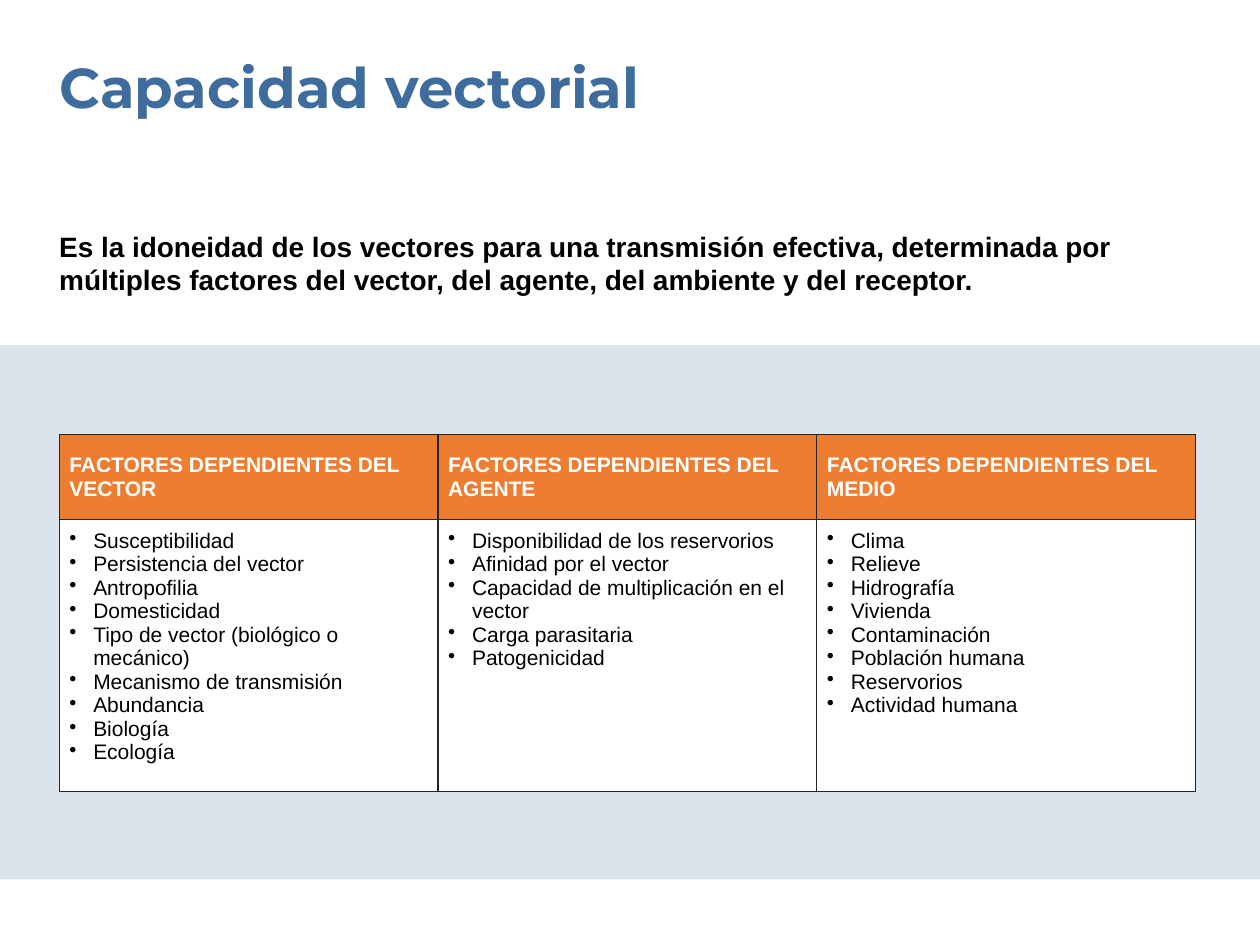
from lxml import etree
from pptx import Presentation
from pptx.dml.color import RGBColor
from pptx.enum.shapes import MSO_SHAPE
from pptx.enum.text import MSO_ANCHOR
from pptx.oxml.ns import qn
from pptx.util import Inches, Pt

RECTANGLE = MSO_SHAPE.RECTANGLE
TOP, MIDDLE = MSO_ANCHOR.TOP, MSO_ANCHOR.MIDDLE

BLACK, WHITE, BLUE = "000000", "FFFFFF", "3D6C9D"
BAND_COLOR, HEADER_COLOR, BORDER_COLOR = "DBE4EA", "ED7D31", "262626"
LEFT_MARGIN = Inches(0.47)

FACTORS = {
    "FACTORES DEPENDIENTES DEL VECTOR": [
        "Susceptibilidad",
        "Persistencia del vector",
        "Antropofilia",
        "Domesticidad",
        "Tipo de vector (biológico o mecánico)",
        "Mecanismo de transmisión",
        "Abundancia",
        "Biología",
        "Ecología",
    ],
    "FACTORES DEPENDIENTES DEL AGENTE": [
        "Disponibilidad de los reservorios",
        "Afinidad por el vector",
        "Capacidad de multiplicación en el vector",
        "Carga parasitaria",
        "Patogenicidad",
    ],
    "FACTORES DEPENDIENTES DEL MEDIO": [
        "Clima",
        "Relieve",
        "Hidrografía",
        "Vivienda",
        "Contaminación",
        "Población humana",
        "Reservorios",
        "Actividad humana",
    ],
}


def paint(fill, color):
    """Give a fill one solid colour."""
    fill.solid()
    fill.fore_color.rgb = RGBColor.from_string(color)


def write(paragraph, text, size=12, font="Arial", color=BLACK, bold=False):
    """Add one formatted run to a paragraph."""
    run = paragraph.add_run()
    run.text = text
    run.font.size = Pt(size)
    run.font.name = font
    run.font.bold = bold
    run.font.color.rgb = RGBColor.from_string(color)


def add_bullet(paragraph, indent=Inches(0.19)):
    """Give a paragraph a black hanging bullet."""
    properties = paragraph._p.get_or_add_pPr()
    properties.set("marL", str(indent))
    properties.set("indent", str(-indent))
    bullet_color = etree.SubElement(properties, qn("a:buClr"))
    etree.SubElement(bullet_color, qn("a:srgbClr"), val=BLACK)
    etree.SubElement(properties, qn("a:buChar"), char="•")


def add_borders(cell):
    """Draw a thin line on the four sides of a cell."""
    properties = cell._tc.get_or_add_tcPr()
    for side in ("a:lnL", "a:lnR", "a:lnT", "a:lnB"):
        line = etree.SubElement(properties, qn(side), w=str(Pt(0.75)))
        fill = etree.SubElement(line, qn("a:solidFill"))
        etree.SubElement(fill, qn("a:srgbClr"), val=BORDER_COLOR)


def format_cell(cell, color, anchor, vertical_margin):
    """Set the borders, fill, anchor and margins of a cell."""
    add_borders(cell)
    paint(cell.fill, color)
    cell.vertical_anchor = anchor
    cell.margin_left = cell.margin_right = Inches(0.08)
    cell.margin_top = cell.margin_bottom = vertical_margin


def add_band(slide, left, top, width, height):
    """Place the pale band behind the table."""
    band = slide.shapes.add_shape(RECTANGLE, left, top, width, height)
    band.shadow.inherit = False
    paint(band.fill, BAND_COLOR)
    band.line.fill.background()


def add_text(slide, left, top, width, height, text, **text_format):
    """Place a wrapped text box without margins."""
    frame = slide.shapes.add_textbox(left, top, width, height).text_frame
    frame.word_wrap = True
    frame.margin_left = frame.margin_right = 0
    frame.margin_top = frame.margin_bottom = 0
    write(frame.paragraphs[0], text, **text_format)


def add_factor_table(slide, left, top, width, height, header_height, factors):
    """Place a table with one headed bullet list per column."""
    table = slide.shapes.add_table(2, len(factors), left, top, width, height).table
    table.rows[0].height = header_height
    table.rows[1].height = height - header_height
    for index, (heading, items) in enumerate(factors.items()):
        table.columns[index].width = width // len(factors)
        header, body = table.cell(0, index), table.cell(1, index)
        format_cell(header, HEADER_COLOR, MIDDLE, Inches(0.05))
        write(header.text_frame.paragraphs[0], heading, color=WHITE, bold=True)
        format_cell(body, WHITE, TOP, Inches(0.08))
        frame = body.text_frame
        for position, item in enumerate(items):
            paragraph = frame.add_paragraph() if position else frame.paragraphs[0]
            add_bullet(paragraph)
            write(paragraph, item)


def main():
    """Build and save the slide."""
    presentation = Presentation()
    presentation.slide_width = Inches(10)
    presentation.slide_height = Inches(7.5)
    slide = presentation.slides.add_slide(presentation.slide_layouts[6])
    add_band(slide, 0, Inches(2.74), presentation.slide_width, Inches(4.24))
    add_text(slide, LEFT_MARGIN, Inches(0.42), Inches(8.55), Inches(0.54),
             "Capacidad vectorial", size=32, font="Montserrat", color=BLUE, bold=True)
    add_factor_table(slide, LEFT_MARGIN, Inches(3.45), Inches(9.02), Inches(2.83),
                     Inches(0.67), FACTORS)
    add_text(slide, LEFT_MARGIN, Inches(1.82), Inches(9.02), Inches(0.54),
             "Es la idoneidad de los vectores para una transmisión efectiva, "
             "determinada por múltiples factores del vector, del agente, "
             "del ambiente y del receptor.", size=16, bold=True)
    presentation.save("out.pptx")


if __name__ == "__main__":
    main()
